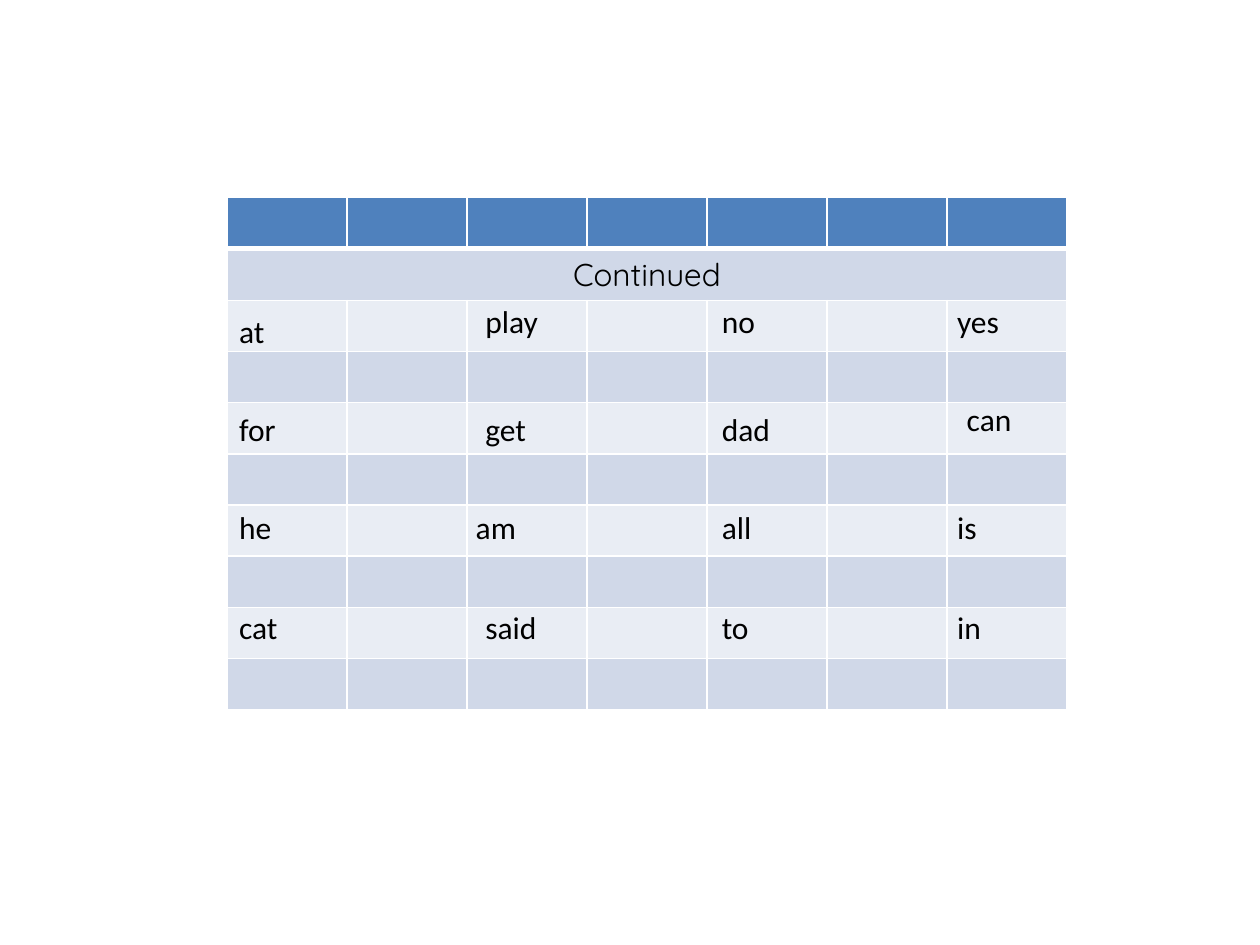
from lxml.etree import SubElement
from pptx import Presentation
from pptx.dml.color import RGBColor
from pptx.enum.text import MSO_AUTO_SIZE, PP_ALIGN
from pptx.oxml.ns import qn
from pptx.util import Inches, Pt

COLUMNS, ROWS = 7, 10
LEFT, TOP = Inches(1.8), Inches(1.565)
COLUMN, ROW = Inches(6.67) / COLUMNS, Inches(4.06) / ROWS
HEADER, DARK_BAND, LIGHT_BAND = "4F81BD", "D0D8E8", "E9EDF4"


def color(value):
    return RGBColor.from_string(value)


def write(frame, text, font_name):
    para = frame.paragraphs[0]
    para.text = text
    para.font.name = font_name
    para.font.size = Pt(18)
    para.font.color.rgb = color("000000")
    return para


deck = Presentation()
deck.slide_width, deck.slide_height = Inches(10), Inches(7.5)
page = deck.slides.add_slide(deck.slide_layouts[6])

# Banded table with white borders, thicker under the header
table = page.shapes.add_table(ROWS, COLUMNS, LEFT, TOP,
                              int(COLUMN * COLUMNS), int(ROW * ROWS)).table
for column in table.columns:
    column.width = int(COLUMN)
for row_index, row in enumerate(table.rows):
    row.height = int(ROW)
    fill = HEADER if row_index == 0 else DARK_BAND if row_index % 2 else LIGHT_BAND
    for cell in row.cells:
        properties = cell._tc.get_or_add_tcPr()
        for side in ("L", "R", "T", "B"):
            under_header = (row_index, side) in ((0, "B"), (1, "T"))
            line = SubElement(properties, qn(f"a:ln{side}"),
                              w=str(Pt(3 if under_header else 1)))
            solid = SubElement(line, qn("a:solidFill"))
            SubElement(solid, qn("a:srgbClr"), val="FFFFFF")
        cell.fill.solid()
        cell.fill.fore_color.rgb = color(fill)

# Title across the second row
title = table.cell(1, 0)
title.merge(table.cell(1, COLUMNS - 1))
write(title.text_frame, "Continued", "Quicksand").alignment = PP_ALIGN.CENTER

# Words over the table, placed in table columns and rows
word_columns = [0, 2.05, 4.02, 5.98]
word_rows = [
    (1.92, ["at", "play", "no", "yes"]),
    (4.04, ["for", "get", "dad", "can"]),
    (5.96, ["he", "am", "all", "is"]),
    (7.9, ["cat", "said", "to", "in"]),
]
nudges = {"at": (0, 0.2), "am": (-0.08, 0), "can": (0.08, -0.2)}
for down, words in word_rows:
    for across, word in zip(word_columns, words):
        right, lower = nudges.get(word, (0, 0))
        box = page.shapes.add_textbox(int(LEFT + (across + right) * COLUMN),
                                      int(TOP + (down + lower) * ROW),
                                      int(COLUMN), int(ROW))
        box.text_frame.word_wrap = True
        box.text_frame.auto_size = MSO_AUTO_SIZE.SHAPE_TO_FIT_TEXT
        write(box.text_frame, word, "Calibri")

deck.save("out.pptx")
